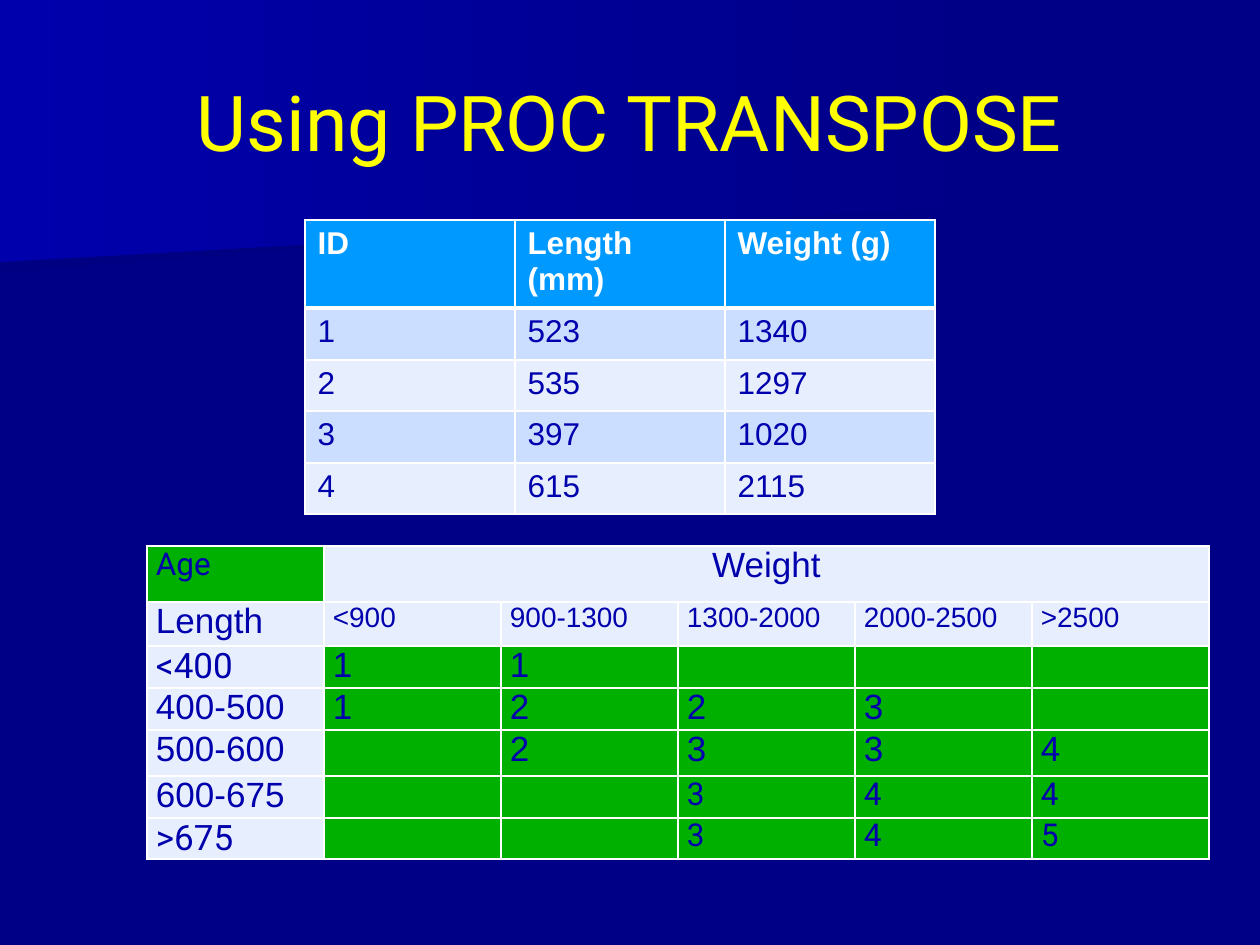
from lxml import etree
from pptx import Presentation, util as u
from pptx.dml.color import RGBColor
from pptx.enum import text
from pptx.oxml import ns

EMU_PER_PX = 914400 / 126
COLORS = {
    "background": "000086", "shade": "000083", "glow": "0000AC",
    "title": "FFFF00", "text": "0000AC", "white": "FFFFFF",
    "header": "0099FF", "band": "CCDEFF", "pale": "E7EFFF", "green": "00B000",
}


def px(value):
    return u.Emu(round(value * EMU_PER_PX))


def rgb(name):
    return RGBColor.from_string(COLORS[name])


class SlideBuilder:
    def __init__(self, presentation):
        self.slide = presentation.slides.add_slide(presentation.slide_layouts[5])
        fill = self.slide.background.fill
        fill.solid()
        fill.fore_color.rgb = rgb("background")

    def gradient_panel(self, points, start):
        builder = self.slide.shapes.build_freeform(*points[0], scale=EMU_PER_PX)
        builder.add_line_segments(points[1:], close=True)
        shape = builder.convert_to_shape()
        shape.shadow.inherit = False
        shape.line.fill.background()
        shape.fill.gradient()
        shape.fill.gradient_angle = 0
        for stop, color in zip(shape.fill.gradient_stops, (start, "background")):
            stop.color.rgb = rgb(color)

    def title(self, words, left, top, width, height):
        shape = self.slide.shapes.title
        shape.left, shape.top, shape.width, shape.height = map(
            px, (left, top, width, height))
        # Keep the title in front of the background panels.
        self.slide.shapes._spTree.append(shape._element)
        frame = shape.text_frame
        frame.text = words
        frame.vertical_anchor = text.MSO_ANCHOR.MIDDLE
        frame.paragraphs[0].alignment = text.PP_ALIGN.CENTER
        self.format_runs(frame, 44, "Roboto", "title")

    def format_runs(self, frame, size, font, color, bold=False):
        for paragraph in frame.paragraphs:
            for run in paragraph.runs:
                run.font.size = u.Pt(size)
                run.font.name = font
                run.font.bold = bold
                run.font.color.rgb = rgb(color)

    def table(self, left, top, column_width, row_heights, rows):
        columns = len(rows[0])
        table = self.slide.shapes.add_table(
            len(rows), columns, px(left), px(top),
            px(column_width * columns), px(sum(row_heights))).table
        table.first_row = table.horz_banding = False
        for column in table.columns:
            column.width = px(column_width)
        for row, height in zip(table.rows, row_heights):
            row.height = px(height)
        for row_index, values in enumerate(rows):
            for column_index, value in enumerate(values):
                table.cell(row_index, column_index).text = value
        return table

    def style_cell(self, cell, fill, size, font="Arial", color="text",
                   bold=False, bottom=1):
        self.format_runs(cell.text_frame, size, font, color, bold)
        properties = cell._tc.get_or_add_tcPr()
        for side, points in (("L", 1), ("R", 1), ("T", 1), ("B", bottom)):
            line = etree.SubElement(properties, ns.qn(f"a:ln{side}"),
                                    w=str(u.Pt(points)))
            solid = etree.SubElement(line, ns.qn("a:solidFill"))
            etree.SubElement(solid, ns.qn("a:srgbClr"), val=COLORS["white"])
        cell.fill.solid()
        cell.fill.fore_color.rgb = rgb(fill)


def add_measurements(builder):
    rows = [
        ["ID", "Length (mm)", "Weight (g)"],
        ["1", "523", "1340"],
        ["2", "535", "1297"],
        ["3", "397", "1020"],
        ["4", "615", "2115"],
    ]
    table = builder.table(305, 220, 210, [88, 52, 51, 52, 51], rows)
    for row_index, row in enumerate(table.rows):
        for cell in row.cells:
            if row_index == 0:
                builder.style_cell(cell, "header", 18, color="white",
                                   bold=True, bottom=3)
            else:
                builder.style_cell(cell, "band" if row_index % 2 else "pale", 18)


def add_age_lookup(builder):
    rows = [
        ["Age", "Weight", "", "", "", ""],
        ["Length", "<900", "900-1300", "1300-2000", "2000-2500", ">2500"],
        ["<400", "1", "1", "", "", ""],
        ["400-500", "1", "2", "2", "3", ""],
        ["500-600", "", "2", "3", "3", "4"],
        ["600-675", "", "", "3", "4", "4"],
        [">675", "", "", "3", "4", "5"],
    ]
    table = builder.table(147, 546, 177, [56, 44, 42, 42, 46, 42, 41], rows)
    table.cell(0, 1).merge(table.cell(0, 5))
    table.cell(0, 1).text_frame.paragraphs[0].alignment = text.PP_ALIGN.CENTER
    for row_index, row in enumerate(table.rows):
        for column_index, cell in enumerate(row.cells):
            is_corner = row_index == column_index == 0
            is_value = row_index > 1 and column_index > 0
            is_range = row_index == 1 and column_index > 0
            is_late_value = is_value and row_index > 4
            size = 16 if is_range else 18 if is_corner or is_late_value else 20
            roboto = is_corner or is_late_value or cell.text in ("<400", ">675")
            cell.margin_left = cell.margin_right = px(9)
            cell.margin_top = cell.margin_bottom = 0
            builder.style_cell(cell, "green" if is_corner or is_value else "pale",
                               size, "Roboto" if roboto else "Arial")


def main():
    presentation = Presentation()
    presentation.slide_width, presentation.slide_height = px(1260), px(945)
    builder = SlideBuilder(presentation)
    builder.gradient_panel(
        [(980, 193), (0, 273), (0, 127), (981, 127), (980, 161)], "shade")
    builder.gradient_panel([(998, 204), (0, 262), (0, 0), (998, 0)], "glow")
    builder.title("Using PROC TRANSPOSE", 63, 42, 1134, 158)
    add_measurements(builder)
    add_age_lookup(builder)
    presentation.save("out.pptx")


if __name__ == "__main__":
    main()
